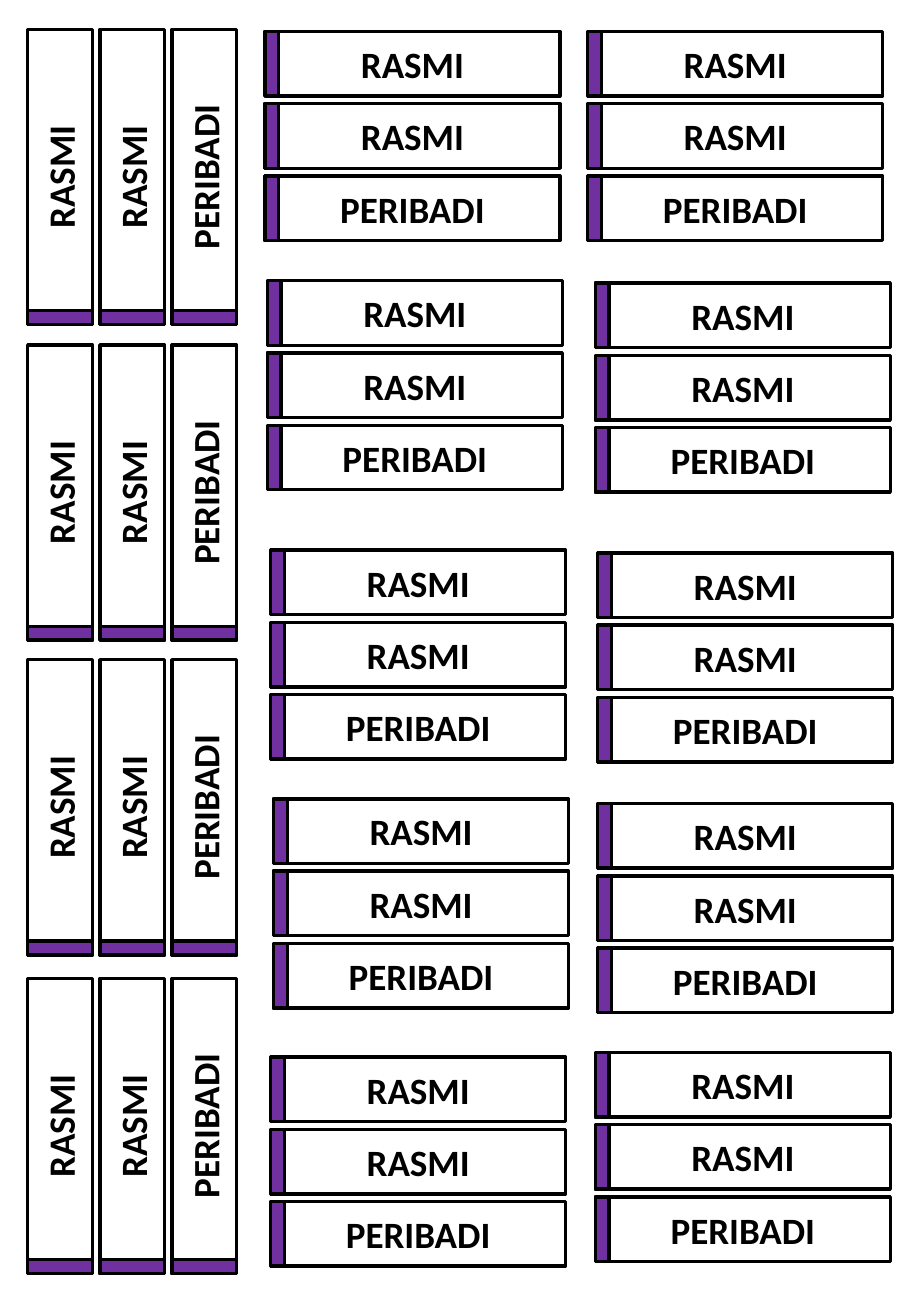
from pptx import Presentation
from pptx.dml.color import RGBColor
from pptx.enum.shapes import MSO_SHAPE as Shape
from pptx.enum.text import MSO_ANCHOR as Anchor, PP_ALIGN as Align
from pptx.util import Cm, Pt

WORDS = ["RASMI", "RASMI", "PERIBADI"]
LONG, SHORT, TAB = 6.17, 1.35, 0.29  # label length, label height, tab width
STEP = 1.51  # from one label to the next

# Left and top of each set, in cm
TALL = [(0.58, 0.61), (0.58, 7.21), (0.58, 13.79), (0.58, 20.45)]
WIDE = [
    (5.54, 0.66), (12.29, 0.66),
    (5.59, 5.87), (12.45, 5.92),
    (5.66, 11.5), (12.5, 11.56),
    (5.72, 16.7), (12.5, 16.8),
    (5.66, 22.1), (12.45, 22),
]


def color(code):
    return RGBColor.from_string(code)


def add_rect(group, x, y, width, height, turn=0):
    """Add an outlined rectangle centred on x, y."""
    rect = group.shapes.add_shape(
        Shape.RECTANGLE, Cm(x - width / 2), Cm(y - height / 2),
        Cm(width), Cm(height))
    rect.rotation = turn
    rect.shadow.inherit = False
    rect.fill.background()
    rect.line.color.rgb = color("000000")
    rect.line.width = Pt(2)
    return rect


def add_label(group, x, y, word, upright):
    """Place a label and its purple tab in the box starting at x, y."""
    turn = 270 if upright else 0
    if upright:
        middle = x + SHORT / 2, y + LONG / 2
        edge = x + SHORT / 2, y + LONG - TAB / 2
    else:
        middle = x + LONG / 2, y + SHORT / 2
        edge = x + TAB / 2, y + SHORT / 2

    # Word
    frame = add_rect(group, *middle, LONG, SHORT, turn).text_frame
    frame.text = word
    frame.vertical_anchor = Anchor.MIDDLE
    para = frame.paragraphs[0]
    para.alignment = Align.CENTER
    font = para.runs[0].font
    font.name, font.size, font.bold = "Calibri", Pt(22), True
    font.color.rgb = color("000000")

    # Tab
    tab = add_rect(group, *edge, TAB, SHORT, turn)
    tab.fill.solid()
    tab.fill.fore_color.rgb = color("7030A0")


def add_set(slide, x, y, upright=False):
    """Group three labels, side by side if upright, else stacked."""
    group = slide.shapes.add_group_shape()
    for i, word in enumerate(WORDS):
        shift = i * STEP
        if upright:
            add_label(group, x + shift, y, word, True)
        else:
            add_label(group, x, y + shift, word, False)


def main():
    deck = Presentation()
    deck.slide_width, deck.slide_height = Cm(19.05), Cm(27.51)
    slide = deck.slides.add_slide(deck.slide_layouts[6])
    for x, y in TALL:
        add_set(slide, x, y, upright=True)
    for x, y in WIDE:
        add_set(slide, x, y)
    deck.save("out.pptx")


if __name__ == "__main__":
    main()
